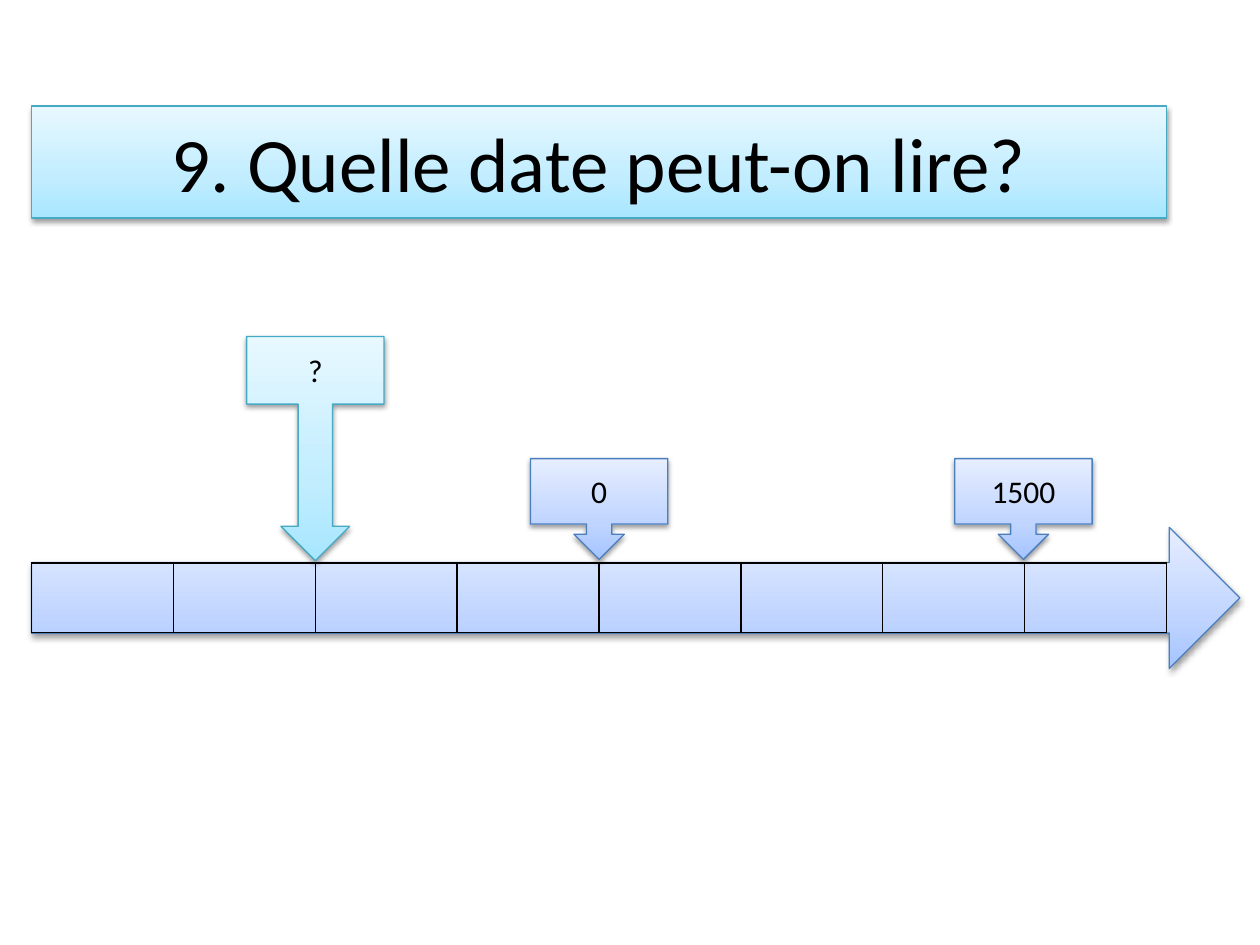
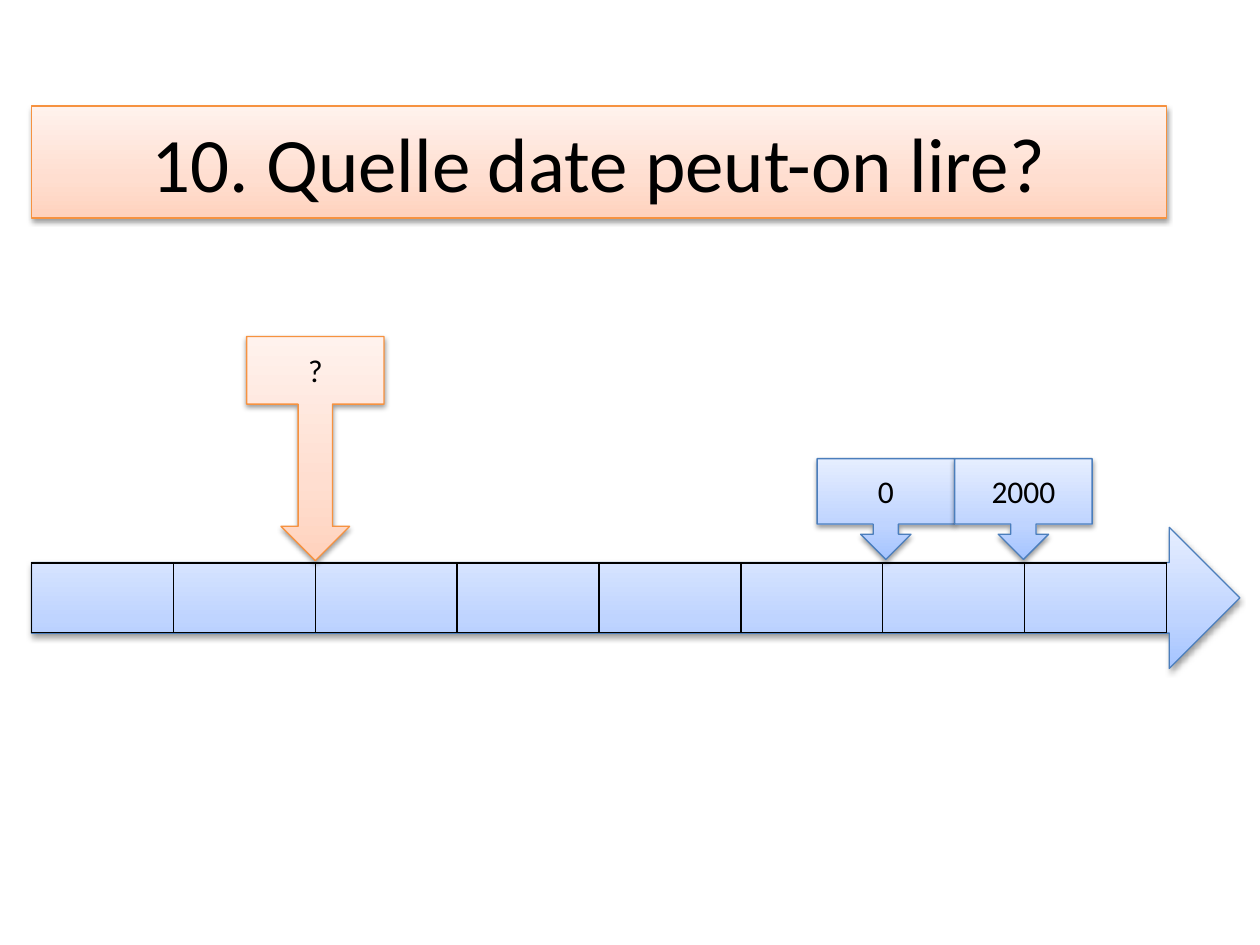
from lxml import etree
from pptx import Presentation
from pptx.dml.color import RGBColor
from pptx.enum.shapes import MSO_SHAPE
from pptx.enum.text import MSO_ANCHOR, MSO_AUTO_SIZE, PP_ALIGN
from pptx.oxml.ns import qn
from pptx.util import Inches, Pt

RIGHT_ARROW = MSO_SHAPE.RIGHT_ARROW
CALLOUT = MSO_SHAPE.DOWN_ARROW_CALLOUT
MIDDLE = MSO_ANCHOR.MIDDLE
CENTER = PP_ALIGN.CENTER
NO_AUTOFIT = MSO_AUTO_SIZE.NONE
TITLE_ONLY = 5

FONT = "Calibri"
BLACK = "000000"
# Each theme: gradient from bottom to top, then outline
BLUE = (("A4C4FF", "BFD4FF", "E6EEFF"), "4B7EBC")
AQUA = (("A7E6FF", "C1EDFF", "E7F8FF"), "46AAC5")
ORANGE = (("FFD2BD", "FFDED0", "FFF2ED"), "F69240")
GRADIENT_STOPS = (0, 35, 100)

# Timeline grid, in inches
LEFT, WIDTH, PERIODS = 0.25, 9.01, 8
PERIOD = WIDTH / PERIODS
BAR_TOP, BAR_HEIGHT = 4.47, 0.55
ARROW_WIDTH, ARROW_HEIGHT = 9.59, 2 * 0.56
CALLOUT_WIDTH = 1.09
DATE_TOP, DATE_HEIGHT = 3.64, 0.8
QUESTION_TOP, QUESTION_HEIGHT, QUESTION_BODY = 2.67, 1.78, 0.302
QUESTION_TICK = 2

# Title, theme, dates as (label, tick on the timeline)
QUESTIONS = (
    ("9. Quelle date peut-on lire?", AQUA, (("0", 4), ("1500", 6.99))),
    ("10. Quelle date peut-on lire?", ORANGE, (("0", 6.02), ("2000", 6.99))),
)


def rgb(hex_color):
    return RGBColor.from_string(hex_color)


def add_xml(parent, tag, **attributes):
    return etree.SubElement(parent, qn(tag), attributes)


def add_color(parent, hex_color):
    return add_xml(parent, "a:srgbClr", val=hex_color)


def apply_theme(shape, theme):
    """Give a shape its vertical gradient, outline and soft shadow."""
    gradient, outline = theme
    shape.fill.gradient()
    shape.fill.gradient_angle = 90
    properties = shape.element.spPr
    stops = properties.find(qn("a:gradFill")).find(qn("a:gsLst"))
    for stop in list(stops):
        stops.remove(stop)
    for position, color in zip(GRADIENT_STOPS, gradient):
        add_color(add_xml(stops, "a:gs", pos=str(position * 1000)), color)

    shape.line.color.rgb = rgb(outline)
    shape.line.width = Pt(0.75)

    shape.shadow.inherit = False
    shadow = add_xml(properties.find(qn("a:effectLst")), "a:outerShdw",
                     blurRad=str(Pt(3.1)), dist=str(Pt(1.6)),
                     dir="5400000", rotWithShape="0")
    add_xml(add_color(shadow, BLACK), "a:alpha", val="38000")


def write(shape, text, size):
    frame = shape.text_frame
    frame.text = text
    frame.word_wrap = True
    frame.auto_size = NO_AUTOFIT
    frame.vertical_anchor = MIDDLE
    paragraph = frame.paragraphs[0]
    paragraph.alignment = CENTER
    font = paragraph.runs[0].font
    font.name, font.size, font.color.rgb = FONT, Pt(size), rgb(BLACK)


def place_title(slide, text, theme):
    title = slide.shapes.title
    title.left, title.top = Inches(LEFT), Inches(0.84)
    title.width, title.height = Inches(WIDTH), Inches(0.89)
    apply_theme(title, theme)
    write(title, text, 44)


def border_cell(cell):
    cell.fill.background()
    properties = cell._tc.get_or_add_tcPr()
    for index, side in enumerate(("a:lnL", "a:lnR", "a:lnT", "a:lnB")):
        border = add_xml(properties, side, w=str(Pt(1)))
        add_color(add_xml(border, "a:solidFill"), BLACK)
        properties.insert(index, border)


def add_timeline(slide):
    middle = BAR_TOP + BAR_HEIGHT / 2
    arrow = slide.shapes.add_shape(
        RIGHT_ARROW, Inches(LEFT), Inches(middle - ARROW_HEIGHT / 2),
        Inches(ARROW_WIDTH), Inches(ARROW_HEIGHT))
    apply_theme(arrow, BLUE)

    periods = slide.shapes.add_table(
        1, PERIODS, Inches(LEFT), Inches(BAR_TOP),
        Inches(WIDTH), Inches(BAR_HEIGHT)).table
    periods.first_row = periods.horz_banding = False
    for cell in periods.iter_cells():
        border_cell(cell)


def add_callout(slide, label, tick, top, height, theme):
    """Add a callout whose tip is centred on a tick of the timeline."""
    left = LEFT + tick * PERIOD - CALLOUT_WIDTH / 2
    callout = slide.shapes.add_shape(
        CALLOUT, Inches(left), Inches(top),
        Inches(CALLOUT_WIDTH), Inches(height))
    apply_theme(callout, theme)
    write(callout, label, 18)
    return callout


def add_question(slide, title, theme, dates):
    place_title(slide, title, theme)
    add_timeline(slide)
    for label, tick in dates:
        add_callout(slide, label, tick, DATE_TOP, DATE_HEIGHT, BLUE)
    unknown = add_callout(slide, "?", QUESTION_TICK, QUESTION_TOP,
                          QUESTION_HEIGHT, theme)
    unknown.adjustments[3] = QUESTION_BODY


def main():
    deck = Presentation()
    deck.slide_width, deck.slide_height = Inches(10), Inches(7.5)
    for title, theme, dates in QUESTIONS:
        slide = deck.slides.add_slide(deck.slide_layouts[TITLE_ONLY])
        add_question(slide, title, theme, dates)
    deck.save("out.pptx")


if __name__ == "__main__":
    main()
